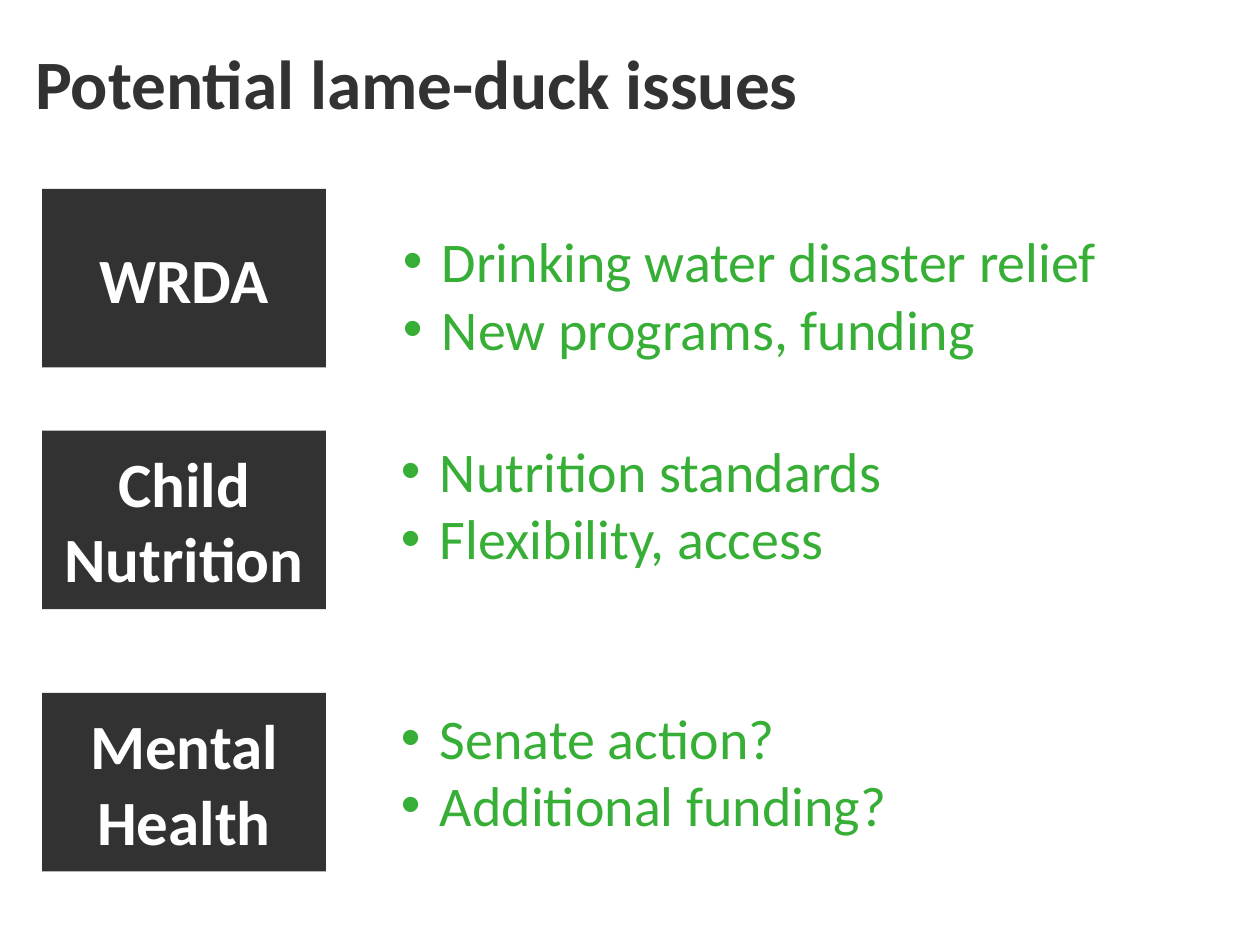
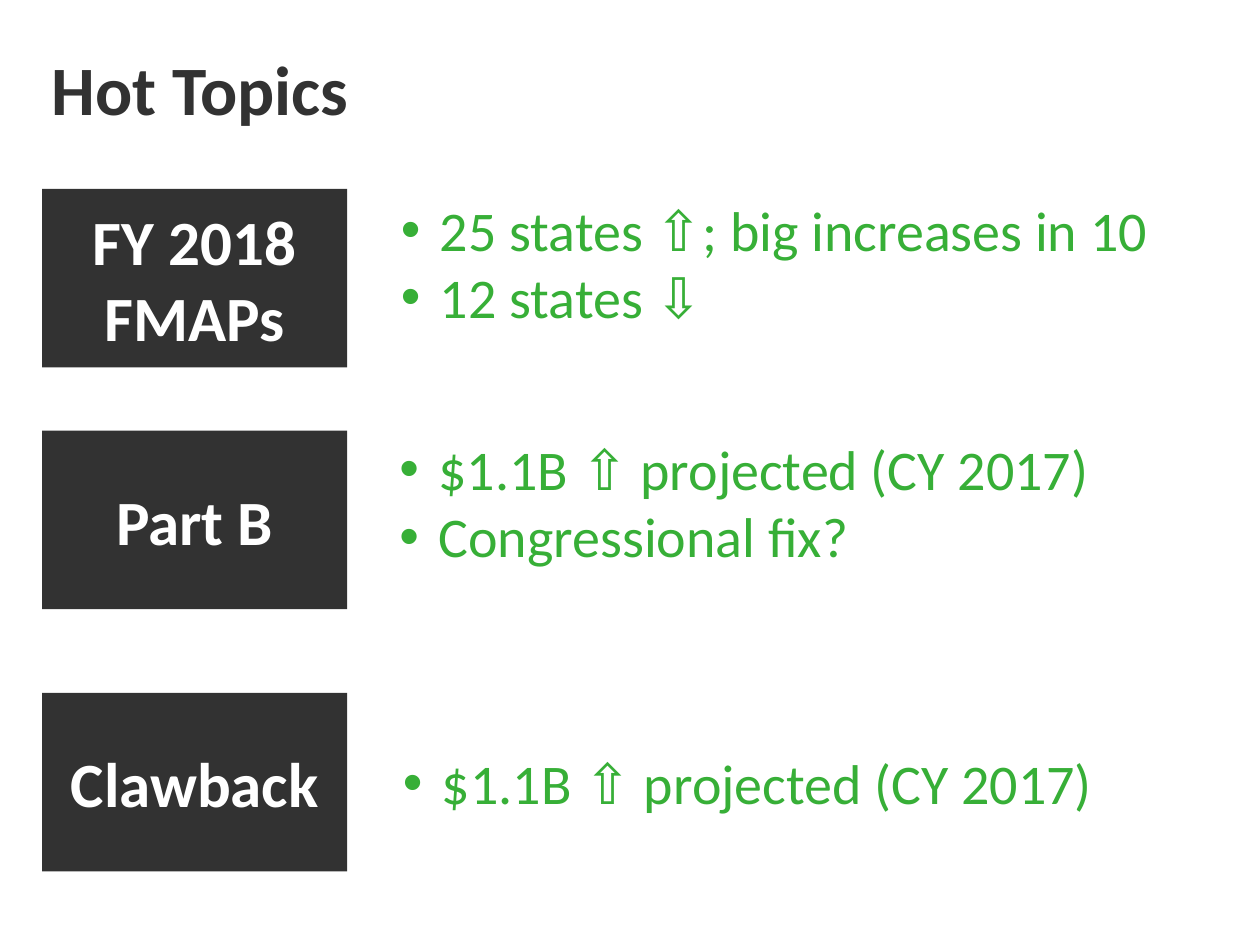
import pptx
import pptx.util
import pptx.dml.color
import pptx.enum.shapes
import pptx.enum.text
from lxml import etree

Cm = pptx.util.Cm
Pt = pptx.util.Pt
CHARCOAL = pptx.dml.color.RGBColor(0x32, 0x32, 0x32)
GREEN = pptx.dml.color.RGBColor(0x37, 0xAF, 0x37)
WHITE = pptx.dml.color.RGBColor(0xFF, 0xFF, 0xFF)
DRAWING_NS = "{http://schemas.openxmlformats.org/drawingml/2006/main}"
MIDDLE = pptx.enum.text.MSO_ANCHOR.MIDDLE

TOPIC_LEFT = 0.85
TOPIC_TOPS = (3.81, 8.68, 13.97)
TOPIC_HEIGHT = 3.6
BULLET_INDENT = Cm(0.79)

slides = [
    {
        "title": "Potential lame-duck issues",
        "title_place": (0.46, 0.84, 21.23, 1.6),
        "topic_width": 5.72,
        "topics": [
            ("WRDA", (7.87, 4.45, 15.88, 4.37), True,
             ["Drinking water disaster relief", "New programs, funding"]),
            ("Child Nutrition", (7.83, 8.68, 10.31, 3), False,
             ["Nutrition standards", "Flexibility, access"]),
            ("Mental Health", (7.83, 14.05, 10.44, 3), False,
             ["Senate action?", "Additional funding?"]),
        ],
    },
    {
        "title": "Hot Topics",
        "title_place": (0.79, 1.27, 21.23, 1.02),
        "topic_width": 6.15,
        "topics": [
            ("FY 2018 FMAPs", (7.83, 3.81, 15.88, 5.74), True,
             ["25 states ⇧; big increases in 10", "12 states ⇩"]),
            ("Part B", (7.8, 8.64, 14.53, 3), False,
             ["$1.1B ⇧ projected (CY 2017)", "Congressional fix?"]),
            ("Clawback", (7.87, 14.96, 14.53, 1.63), False,
             ["$1.1B ⇧ projected (CY 2017)"]),
        ],
    },
]


def add_words(paragraph, words, size, color, bold=False):
    run = paragraph.add_run()
    run.text = words
    run.font.name = "Calibri"
    run.font.size = Pt(size)
    run.font.bold = bold
    run.font.color.rgb = color


def add_bullet(paragraph):
    properties = paragraph._p.get_or_add_pPr()
    properties.set("marL", str(BULLET_INDENT))
    properties.set("indent", str(-BULLET_INDENT))
    etree.SubElement(properties, DRAWING_NS + "buFont", typeface="Arial")
    etree.SubElement(properties, DRAWING_NS + "buChar", char="•")


deck = pptx.Presentation()
deck.slide_width = Cm(25.4)
deck.slide_height = Cm(19.05)

for content in slides:
    slide = deck.slides.add_slide(deck.slide_layouts[6])
    slide.background.fill.solid()
    slide.background.fill.fore_color.rgb = WHITE

    title = slide.shapes.add_textbox(*map(Cm, content["title_place"])).text_frame
    title.word_wrap = True
    title.vertical_anchor = MIDDLE
    add_words(title.paragraphs[0], content["title"], 39.6, CHARCOAL, bold=True)

    for top, (topic, points_place, wraps, points) in zip(TOPIC_TOPS, content["topics"]):
        topic_block = slide.shapes.add_shape(
            pptx.enum.shapes.MSO_SHAPE.RECTANGLE,
            Cm(TOPIC_LEFT), Cm(top), Cm(content["topic_width"]), Cm(TOPIC_HEIGHT))
        topic_block.shadow.inherit = False
        topic_block.fill.solid()
        topic_block.fill.fore_color.rgb = CHARCOAL
        topic_block.line.fill.background()
        topic_block.text_frame.word_wrap = True
        topic_block.text_frame.vertical_anchor = MIDDLE
        topic_line = topic_block.text_frame.paragraphs[0]
        topic_line.alignment = pptx.enum.text.PP_ALIGN.CENTER
        add_words(topic_line, topic, 36, WHITE, bold=True)

        point_list = slide.shapes.add_textbox(*map(Cm, points_place)).text_frame
        point_list.word_wrap = wraps
        point_list.auto_size = pptx.enum.text.MSO_AUTO_SIZE.SHAPE_TO_FIT_TEXT
        for index, point in enumerate(points):
            point_line = point_list.add_paragraph() if index else point_list.paragraphs[0]
            add_bullet(point_line)
            add_words(point_line, point, 32, GREEN)

deck.save("out.pptx")
